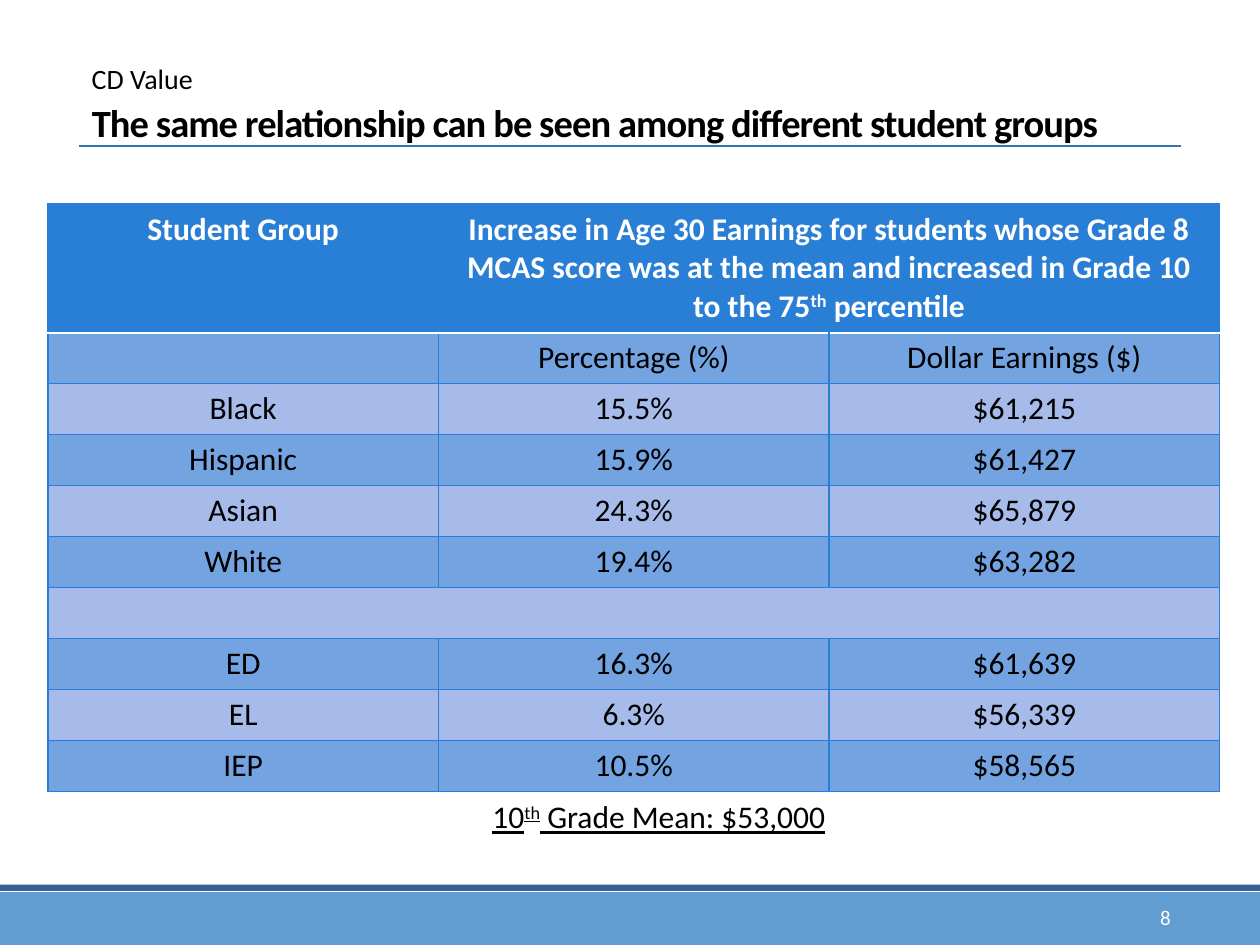
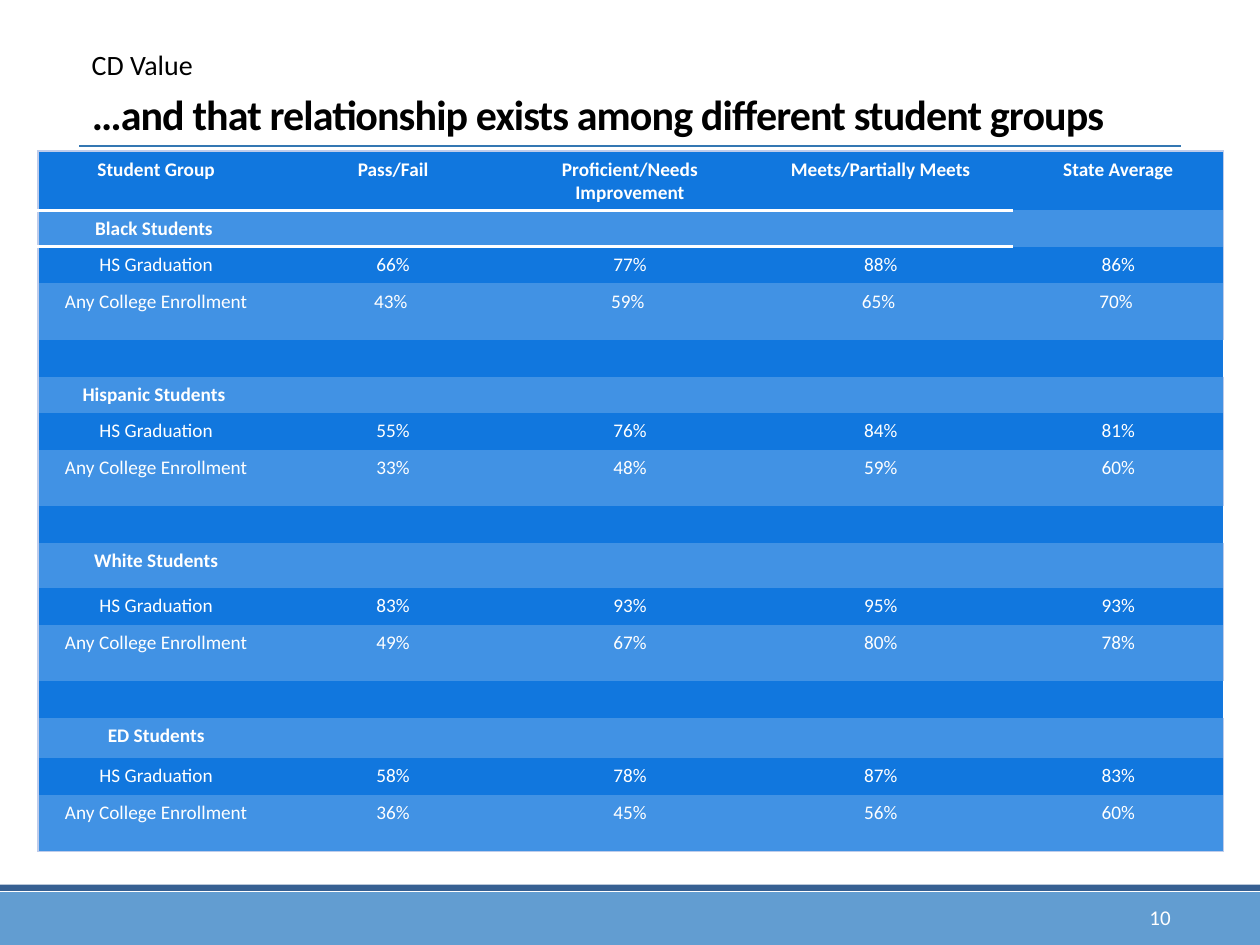
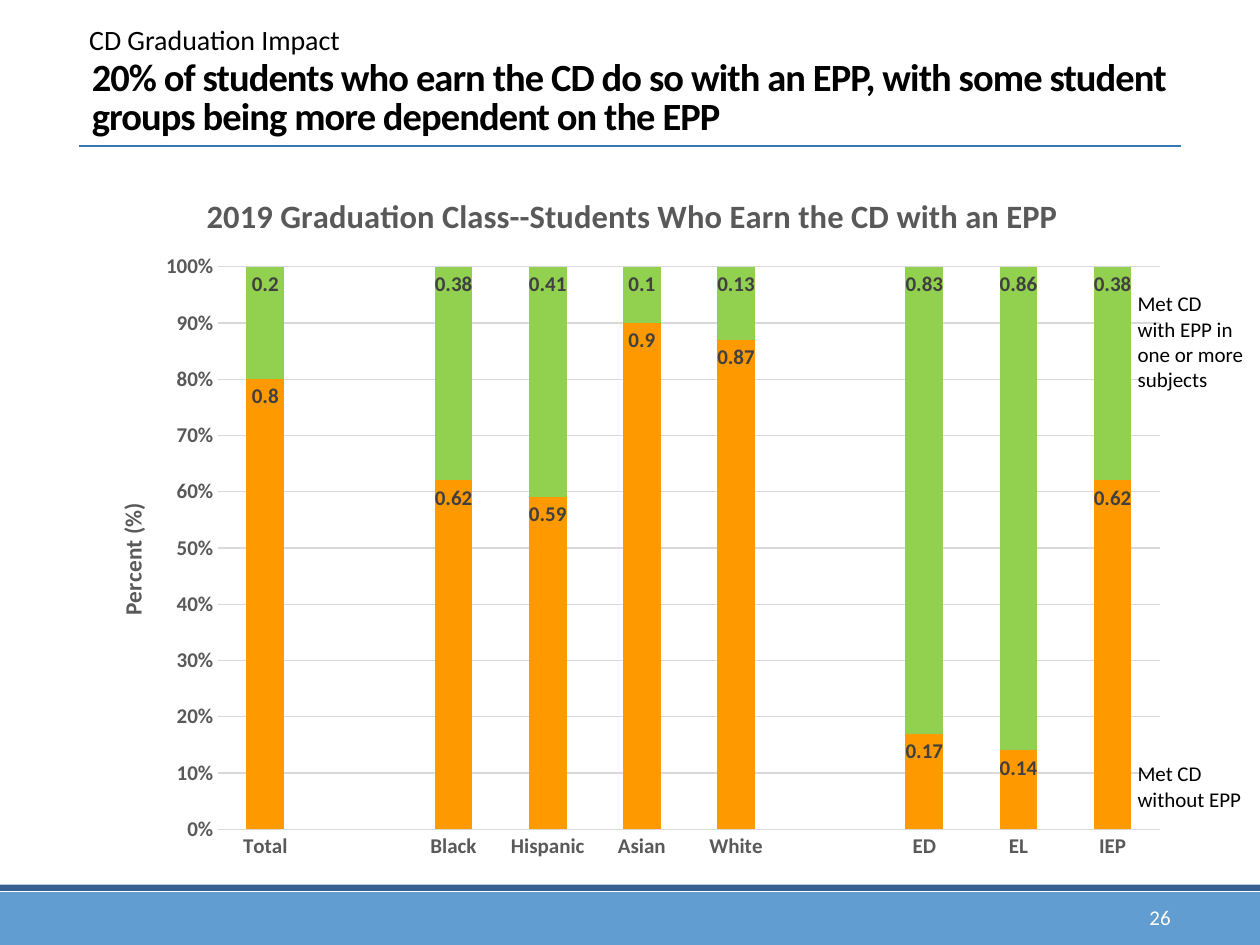
from lxml import etree
from pptx import Presentation
from pptx import util as u
from pptx.chart.data import CategoryChartData
from pptx.dml.color import RGBColor
from pptx.enum import chart as charts, shapes, text
from pptx.oxml import parse_xml
from pptx.oxml.ns import nsdecls, qn

WIDTH, HEIGHT = 10, 7.5
MARGIN = 0.63
CONTENT_WIDTH = 8.75
FONT = "Calibri"
NO_STYLE = "{2D5ABB26-0587-4C30-8999-92F81FD0307C}"

BLACK = RGBColor(0x00, 0x00, 0x00)
WHITE = RGBColor(0xFF, 0xFF, 0xFF)
FOOTER_BLUE = RGBColor(0x62, 0x9D, 0xD1)
FOOTER_EDGE = RGBColor(0x37, 0x60, 0x92)
RULE_BLUE = RGBColor(0x34, 0x77, 0xB2)
EARNINGS_HEAD = RGBColor(0x29, 0x7F, 0xD5)
EARNINGS_DARK = RGBColor(0x74, 0xA3, 0xE1)
EARNINGS_LIGHT = RGBColor(0xA6, 0xBB, 0xEA)
RATES_DARK = RGBColor(0x11, 0x77, 0xDE)
RATES_LIGHT = RGBColor(0x41, 0x92, 0xE4)
RATES_EDGE = RGBColor(0xBE, 0xCC, 0xEB)
ORANGE = RGBColor(0xFF, 0x99, 0x00)
GREEN = RGBColor(0x92, 0xD0, 0x50)
CHART_TEXT = RGBColor(0x59, 0x59, 0x59)
LABEL_TEXT = RGBColor(0x40, 0x40, 0x40)
GRID_GRAY = RGBColor(0xD9, 0xD9, 0xD9)

LEFT, CENTER, RIGHT = (text.PP_ALIGN.LEFT, text.PP_ALIGN.CENTER,
                       text.PP_ALIGN.RIGHT)
TOP, MIDDLE, BOTTOM = (text.MSO_ANCHOR.TOP, text.MSO_ANCHOR.MIDDLE,
                       text.MSO_ANCHOR.BOTTOM)


def inches(*lengths):
    return [u.Inches(length) for length in lengths]


def set_font(font, size, color=BLACK, bold=False, underline=False):
    font.name, font.size = FONT, u.Pt(size)
    font.color.rgb = color
    font.bold, font.underline = bold, underline


def write_text(frame, content, align=LEFT, line_spacing=None, tracking=None,
               size=12, **font_format):
    """Fill a frame: a new line starts a paragraph, ^marks^ raise text."""
    for index, line in enumerate(content.split("\n")):
        paragraph = frame.add_paragraph() if index else frame.paragraphs[0]
        paragraph.alignment = align
        if line_spacing:
            paragraph.line_spacing = line_spacing
        for position, part in enumerate(line.split("^") if line else []):
            run = paragraph.add_run()
            run.text = part
            set_font(run.font, size, **font_format)
            properties = run._r.get_or_add_rPr()
            if position % 2:
                properties.set("baseline", "30000")
            if tracking:
                properties.set("spc", str(int(tracking * 100)))
        if not line:
            end = paragraph._p.get_or_add_endParaRPr()
            end.set("sz", str(size * 100))


def add_text(slide, box, content, anchor=TOP, wrap=True, **text_format):
    frame = slide.shapes.add_textbox(*inches(*box)).text_frame
    frame.word_wrap = wrap
    frame.vertical_anchor = anchor
    write_text(frame, content, **text_format)


def add_band(slide, top, height, color):
    band = slide.shapes.add_shape(shapes.MSO_SHAPE.RECTANGLE,
                                  *inches(0, top, WIDTH, height))
    band.shadow.inherit = False
    band.fill.solid()
    band.fill.fore_color.rgb = color
    band.line.fill.background()


def add_rule(slide, top):
    rule = slide.shapes.add_connector(
        shapes.MSO_CONNECTOR.STRAIGHT,
        *inches(MARGIN, top, WIDTH - MARGIN, top))
    rule.line.color.rgb = RULE_BLUE
    rule.line.width = u.Pt(1)
    etree.SubElement(rule._element.spPr, qn("a:effectLst"))


def add_slide(presentation, number, section, section_box, title, title_top,
              title_size):
    """Add a slide with the shared footer, rule, title and section label."""
    slide = presentation.slides.add_slide(presentation.slide_layouts[6])
    add_band(slide, 7.08, 0.42, FOOTER_BLUE)
    add_band(slide, 7.02, 0.05, FOOTER_EDGE)
    add_rule(slide, 1.16)
    add_text(slide, (8.31, 7.18, 1.08, 0.2), str(number), anchor=MIDDLE,
             align=RIGHT, color=WHITE)
    add_text(slide, (MARGIN, title_top, CONTENT_WIDTH, 0.84), title,
             anchor=BOTTOM, size=title_size, bold=True, line_spacing=0.85,
             tracking=-0.5)
    add_text(slide, section_box, section, size=16)
    return slide


def add_table(slide, left, top, column_widths, row_heights):
    frame = slide.shapes.add_table(
        len(row_heights), len(column_widths),
        *inches(left, top, sum(column_widths), sum(row_heights)))
    table = frame.table
    table.first_row = table.horz_banding = False
    table._tbl.tblPr.find(qn("a:tableStyleId")).text = NO_STYLE
    for column, width in zip(table.columns, column_widths):
        column.width = u.Inches(width)
    for row, height in zip(table.rows, row_heights):
        row.height = u.Inches(height)
    return table


def fill_cell(cell, content, fill, **text_format):
    cell.fill.solid()
    cell.fill.fore_color.rgb = fill
    write_text(cell.text_frame, content, align=CENTER, **text_format)


def set_borders(cell, **borders):
    """Draw cell edges, each given as L, R, T or B = (color, points)."""
    properties = cell._tc.get_or_add_tcPr()
    edges = [side for side in "LRTB" if side in borders]
    for index, side in enumerate(edges):
        color, points = borders[side]
        properties.insert(index, parse_xml(
            f'<a:ln{side} {nsdecls("a")} w="{int(u.Pt(points))}"><a:solidFill>'
            f'<a:srgbClr val="{color}"/></a:solidFill></a:ln{side}>'))


def add_earnings_table(slide):
    rows = [
        ("Student Group",
         "Increase in Age 30 Earnings for students whose Grade 8 MCAS score "
         "was at the mean and increased in Grade 10 to the 75^th^ percentile",
         ""),
        ("", "Percentage (%)", "Dollar Earnings ($)"),
        ("Black", "15.5%", "$61,215"),
        ("Hispanic", "15.9%", "$61,427"),
        ("Asian", "24.3%", "$65,879"),
        ("White", "19.4%", "$63,282"),
        ("", "", ""),
        ("ED", "16.3%", "$61,639"),
        ("EL", "6.3%", "$56,339"),
        ("IEP", "10.5%", "$58,565"),
    ]
    table = add_table(slide, 0.38, 1.62, [3.1] * 3,
                      [1.02] + [0.405] * (len(rows) - 1))
    table.cell(0, 1).merge(table.cell(0, 2))
    table.cell(6, 0).merge(table.cell(6, 2))
    edge, header_line = (EARNINGS_HEAD, 1), (WHITE, 1.25)
    for r, row in enumerate(rows):
        fill = EARNINGS_DARK if r % 2 else EARNINGS_LIGHT
        for c, content in enumerate(row):
            cell = table.cell(r, c)
            fill_cell(cell, content, EARNINGS_HEAD if r == 0 else fill,
                      size=18, bold=r == 0, color=BLACK if r else WHITE)
            set_borders(cell, L=edge, R=edge,
                        T=header_line if r == 1 else edge,
                        B=header_line if r == 0 else edge)


def add_rates_table(slide):
    header = ("Student Group", "Pass/Fail", "Proficient/Needs Improvement",
              "Meets/Partially Meets", "State Average")
    groups = [
        ("Black Students ", 0.29, ("66%", "77%", "88%", "86%"),
         ("43% ", "59% ", "65% ", "70% ")),
        ("Hispanic Students ", 0.29, ("55%", "76%", "84%", "81%"),
         ("33%", "48%", "59%", "60%")),
        ("White Students", 0.36, ("83%", "93%", "95%", "93%"),
         ("49%", "67%", "80%", "78%")),
        ("ED Students", 0.32, ("58%", "78%", "87%", "83%"),
         ("36%", "45%", "56%", "60%")),
    ]
    blank = ("",) * 4
    rows, heights = [header], [0.47]
    for name, name_height, graduation, enrollment in groups:
        if len(rows) > 1:
            rows.append(("", *blank))
            heights.append(0.29)
        rows += [(name, *blank), ("HS Graduation", *graduation),
                 ("Any College Enrollment", *enrollment)]
        heights += [name_height, 0.29, 0.45]

    table = add_table(slide, 0.3, 1.2, [1.88, 1.88, 1.88, 2.1, 1.67], heights)
    edge, header_line = (RATES_EDGE, 1), (WHITE, 2)
    last_row, last_column = len(rows) - 1, len(header) - 1
    for r, row in enumerate(rows):
        if not any(row):
            table.cell(r, 0).merge(table.cell(r, last_column))
        for c, content in enumerate(row):
            cell = table.cell(r, c)
            fill_cell(cell, content, RATES_LIGHT if r % 2 else RATES_DARK,
                      size=11, color=WHITE, bold=r == 0 or not any(row[1:]))
            borders = {}
            if c == 0:
                borders["L"] = edge
            if c == last_column:
                borders["R"] = edge
            if r == 0:
                borders["T"] = edge
            if r == last_row:
                borders["B"] = edge
            if c < last_column and r < 2:
                borders["T" if r else "B"] = header_line
            set_borders(cell, **borders)


def set_layout(parent, before, target=None, **shares):
    """Place a chart part by shares of the chart's size."""
    for old in parent.findall(qn("c:layout")):
        parent.remove(old)
    inner = f'<c:layoutTarget val="{target}"/>' if target else ""
    modes = "".join(f'<c:{axis}Mode val="edge"/>' for axis in "xy")
    places = "".join(f'<c:{key} val="{share}"/>'
                     for key, share in shares.items())
    layout = parse_xml(f'<c:layout {nsdecls("c")}><c:manualLayout>{inner}'
                       f'{modes}{places}</c:manualLayout></c:layout>')
    parent.insert(before, layout)


def style_axis(axis):
    axis.major_tick_mark = axis.minor_tick_mark = charts.XL_TICK_MARK.NONE
    set_font(axis.tick_labels.font, 12, CHART_TEXT, bold=True)


def add_epp_chart(slide):
    data = CategoryChartData()
    data.categories = ["Total", "", "Black", "Hispanic", "Asian", "White", "",
                       "ED", "EL", "IEP"]
    data.add_series("Series 1", [0.8, None, 0.62, 0.59, 0.9, 0.87, None,
                                 0.17, 0.14, 0.62])
    data.add_series("Series 2", [0.2, None, 0.38, 0.41, 0.1, 0.13, None,
                                 0.83, 0.86, 0.38])
    chart = slide.shapes.add_chart(
        charts.XL_CHART_TYPE.COLUMN_STACKED,
        *inches(MARGIN, 1.26, CONTENT_WIDTH, 5.68), data).chart
    set_font(chart.font, 10)
    chart.has_legend = False
    chart.has_title = True
    write_text(chart.chart_title.text_frame,
               "2019 Graduation Class--Students Who Earn the CD with an EPP",
               align=CENTER, size=18.6, color=CHART_TEXT, bold=True)
    set_layout(chart.chart_title._element, 1, x=0.11, y=0.04)
    set_layout(chart._chartSpace.chart.plotArea, 0, target="inner",
               x=0.126, y=0.151, w=0.854, h=0.786)

    style_axis(chart.category_axis)
    chart.category_axis.format.line.color.rgb = GRID_GRAY
    chart.category_axis.format.line.width = u.Pt(0.75)

    values = chart.value_axis
    style_axis(values)
    values.minimum_scale, values.maximum_scale, values.major_unit = 0, 1, 0.1
    values.tick_labels.number_format = "0%"
    values.tick_labels.number_format_is_linked = False
    values.format.line.fill.background()
    values.major_gridlines.format.line.color.rgb = GRID_GRAY
    values.major_gridlines.format.line.width = u.Pt(0.75)
    write_text(values.axis_title.text_frame, "Percent (%)", align=CENTER,
               size=13.3, color=CHART_TEXT, bold=True)
    values.axis_title.text_frame._txBody.bodyPr.set("rot", "-5400000")
    set_layout(values.axis_title._element, 1, x=0.03, y=0.475)

    plot = chart.plots[0]
    plot.gap_width, plot.overlap = 150, 100
    plot.vary_by_categories = False
    for series, color in zip(plot.series, (ORANGE, GREEN)):
        series.format.fill.solid()
        series.format.fill.fore_color.rgb = color
        labels = series.data_labels
        labels.show_value = True
        labels.position = charts.XL_LABEL_POSITION.INSIDE_END
        set_font(labels.font, 12, LABEL_TEXT, bold=True)


def main():
    presentation = Presentation()
    presentation.slide_width, presentation.slide_height = inches(WIDTH, HEIGHT)

    earnings = add_slide(
        presentation, 8, "CD Value", (MARGIN, 0.44, 1.13, 0.37),
        "The same relationship can be seen among different student groups",
        0.36, 22)
    add_earnings_table(earnings)
    add_text(earnings, (3.06, 6.28, 4.34, 0.4),
             "10^th^ Grade Mean: $53,000", align=CENTER, size=18,
             underline=True)

    rates = add_slide(
        presentation, 10, "CD Value", (MARGIN, 0.33, 1.13, 0.37),
        "…and that relationship exists among different student groups",
        0.31, 24)
    add_rates_table(rates)

    impact = add_slide(
        presentation, 26, "CD Graduation Impact", (0.61, 0.13, 2.36, 0.37),
        "20% of students who earn the CD do so with an EPP, with some student "
        "groups being more dependent on the EPP", 0.31, 22)
    add_epp_chart(impact)
    add_text(impact, (8.93, 5.99, 1.07, 0.5), "Met CD\nwithout EPP",
             wrap=False)
    add_text(impact, (8.93, 2.26, 1.09, 0.91),
             "Met CD\nwith EPP in\none or more\nsubjects", wrap=False)

    presentation.save("out.pptx")


if __name__ == "__main__":
    main()
